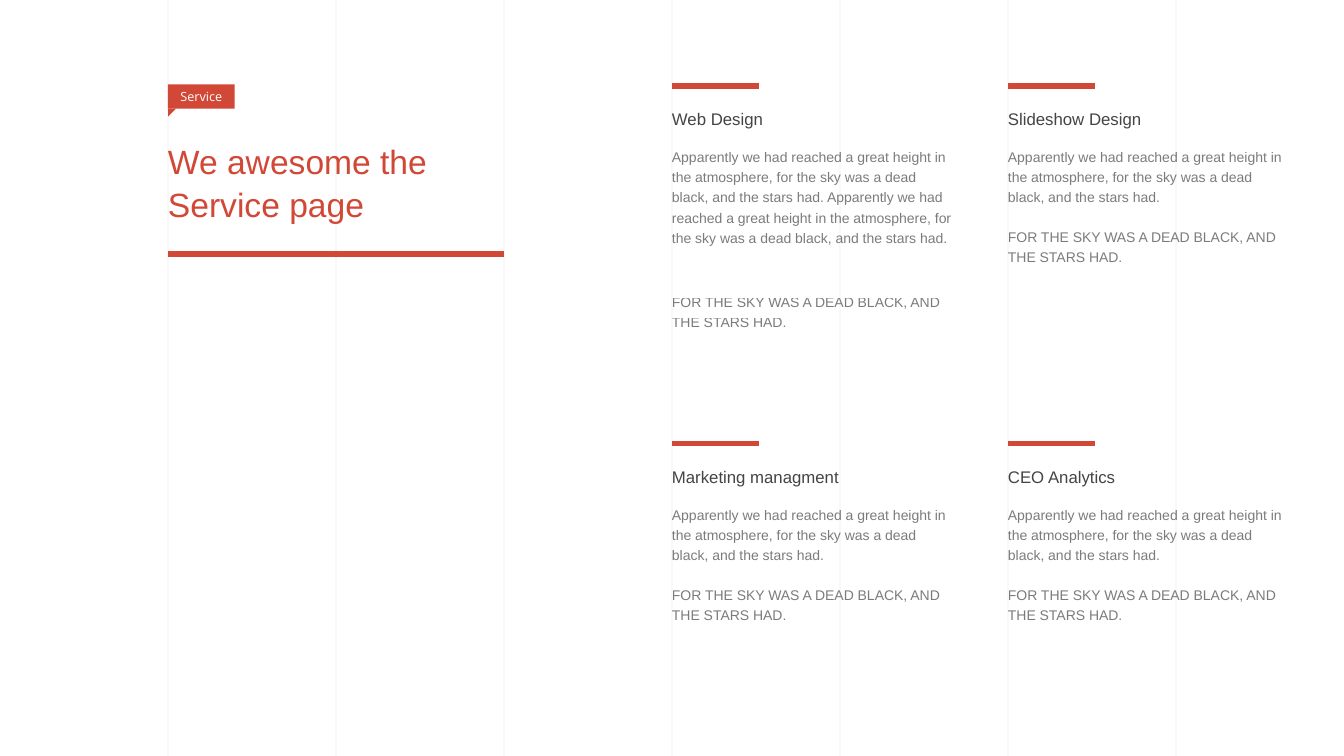
from lxml.etree import SubElement
from pptx import Presentation
from pptx.dml.color import RGBColor
from pptx.enum.shapes import MSO_CONNECTOR as Connector, MSO_SHAPE as Shape
from pptx.enum.text import MSO_ANCHOR as Anchor, MSO_AUTO_SIZE as AutoSize, PP_ALIGN as Align
from pptx.oxml.ns import qn
from pptx.util import Cm, Pt

RED = RGBColor(0xD1, 0x48, 0x36)
DARK = RGBColor(0x44, 0x44, 0x44)
WHITE = RGBColor(0xFF, 0xFF, 0xFF)

# Lengths in cm
SLIDE_WIDTH, SLIDE_HEIGHT = 33.87, 19.05
COLUMN = SLIDE_WIDTH / 8
CARD_TOP, CARD_PITCH, CARD_WIDTH = 2.16, 9.02, 7.16

SENTENCE = ("Apparently we had reached a great height in the atmosphere, "
            "for the sky was a dead black, and the stars had.")
NOTE = "FOR THE SKY WAS A DEAD BLACK, AND THE STARS HAD."

# Heading, body, body height, offset of the note from the card top
CARDS = [
    ("Web Design", f"{SENTENCE} {SENTENCE}", 5.05, 5.16),
    ("Slideshow Design", SENTENCE, 2.59, 3.51),
    ("Marketing managment", SENTENCE, 2.59, 3.51),
    ("CEO Analytics", SENTENCE, 2.59, 3.51),
]


def set_alpha(fill, percent):
    color = fill._xPr.find(f".//{qn('a:srgbClr')}")
    SubElement(color, qn("a:alpha"), val=str(percent * 1000))


def write(paragraph, text, size, color, font="Arial", align=Align.LEFT,
          spacing=None, before=0, alpha=None):
    paragraph.text = text
    paragraph.alignment = align
    paragraph.line_spacing = spacing
    paragraph.space_before = Pt(before)
    for run in paragraph.runs:
        run.font.name = font
        run.font.size = Pt(size)
        run.font.fill.solid()
        run.font.fill.fore_color.rgb = color
        if alpha:
            set_alpha(run.font.fill, alpha)


def add_text_frame(shapes, left, top, width, height):
    frame = shapes.add_textbox(Cm(left), Cm(top), Cm(width), Cm(height)).text_frame
    frame.margin_left = frame.margin_right = 0
    frame.margin_top = frame.margin_bottom = 0
    frame.word_wrap = True
    frame.auto_size = AutoSize.SHAPE_TO_FIT_TEXT
    return frame


def add_line(shapes, left, top, right, bottom, color, weight, alpha=None):
    line = shapes.add_connector(Connector.STRAIGHT, Cm(left), Cm(top), Cm(right), Cm(bottom))
    line.line.color.rgb = color
    line.line.width = Pt(weight)
    if alpha:
        set_alpha(line.line.fill, alpha)
    SubElement(line._element.spPr, qn("a:effectLst"))


def add_red_shape(shapes, kind, left, top, width, height):
    shape = shapes.add_shape(kind, Cm(left), Cm(top), Cm(width), Cm(height))
    shape.shadow.inherit = False
    shape.fill.solid()
    shape.fill.fore_color.rgb = RED
    shape.line.fill.background()
    return shape


def add_grid(slide):
    for column in range(1, 8):
        add_line(slide.shapes, column * COLUMN, 0, column * COLUMN, SLIDE_HEIGHT,
                 DARK, 0.5, alpha=10)


def add_title_block(slide, left, top, width):
    # Tag with its folded corner
    tag_parts = slide.shapes.add_group_shape().shapes
    tag = add_red_shape(tag_parts, Shape.RECTANGLE, left, top, 1.68, 0.61).text_frame
    tag.margin_left = tag.margin_right = 0
    tag.vertical_anchor = Anchor.MIDDLE
    write(tag.paragraphs[0], "Service", 9, WHITE, font="Open Sans", align=Align.CENTER)
    corner = add_red_shape(tag_parts, Shape.RIGHT_TRIANGLE, left, top + 0.61, 0.2, 0.2)
    corner.rotation = 90

    # Title and rule
    title = add_text_frame(slide.shapes, left, top + 1.35, width, 2.08)
    write(title.paragraphs[0], "We awesome the\vService page", 24, RED, spacing=1.07)
    add_line(slide.shapes, left, top + 4.27, left + width, top + 4.27, RED, 4)


def add_card(slide, left, top, width, heading, body, body_height, note_offset):
    add_line(slide.shapes, left, top, left + 2.2, top, RED, 4)
    texts = slide.shapes.add_group_shape().shapes
    main = add_text_frame(texts, left, top + 0.47, width, body_height)
    write(main.paragraphs[0], heading, 12, DARK, spacing=1.2)
    write(main.add_paragraph(), body, 10, DARK, spacing=1.2, before=12, alpha=70)
    note = add_text_frame(texts, left, top + note_offset, width, 1.02)
    write(note.paragraphs[0], NOTE, 10, DARK, spacing=1.2, alpha=70)


def main():
    deck = Presentation()
    deck.slide_width, deck.slide_height = Cm(SLIDE_WIDTH), Cm(SLIDE_HEIGHT)
    slide = deck.slides.add_slide(deck.slide_layouts[6])
    add_grid(slide)
    add_title_block(slide, COLUMN, 2.13, 2 * COLUMN)
    for index, card in enumerate(CARDS):
        row, column = divmod(index, 2)
        add_card(slide, (4 + 2 * column) * COLUMN, CARD_TOP + row * CARD_PITCH,
                 CARD_WIDTH, *card)
    deck.save("out.pptx")


if __name__ == "__main__":
    main()
